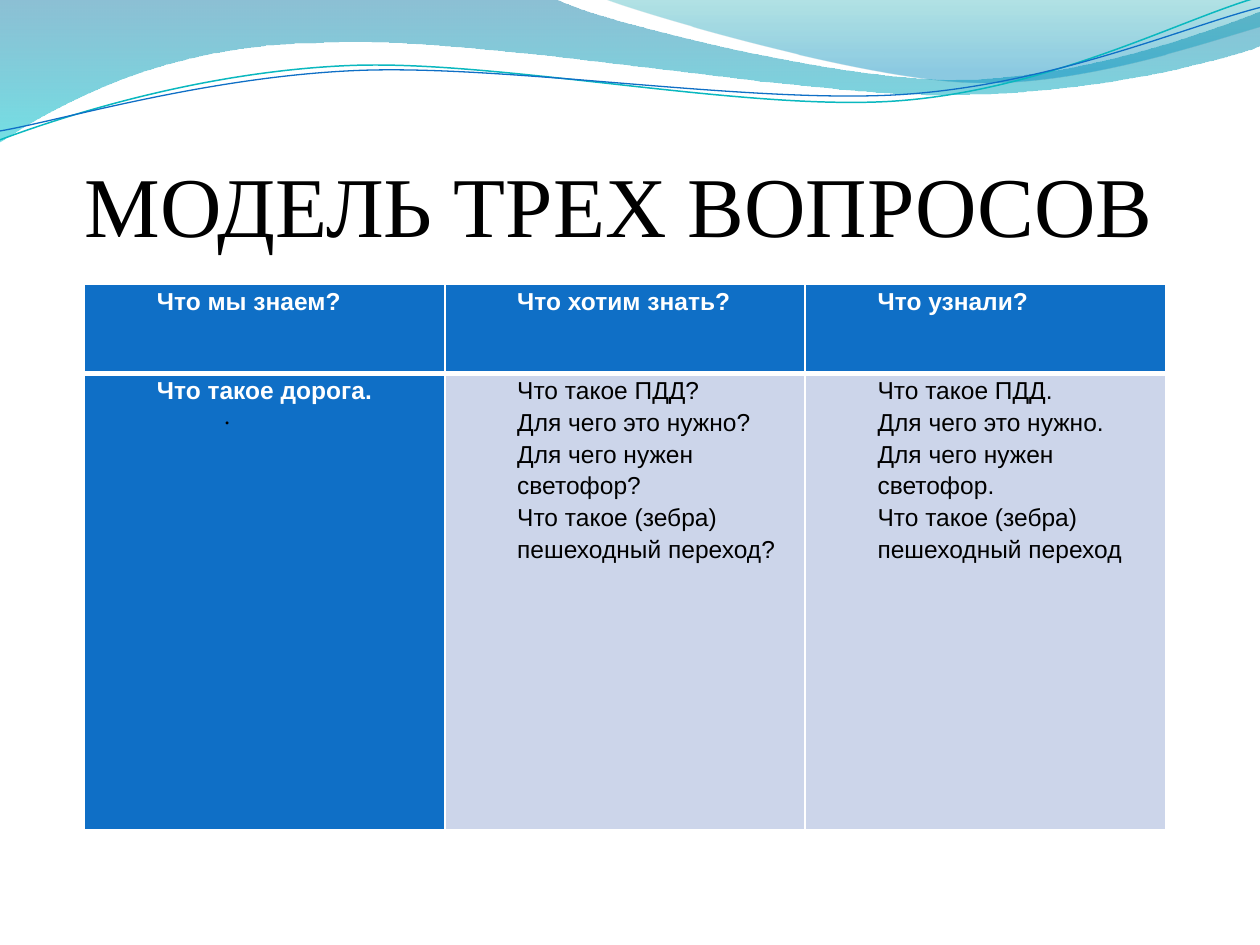
from math import cos, radians, sin

from lxml import etree
from pptx import Presentation
from pptx.dml.color import RGBColor
from pptx.enum.text import MSO_ANCHOR, MSO_AUTO_SIZE, PP_ALIGN
from pptx.oxml.ns import qn
from pptx.util import Inches, Pt

LEFT = PP_ALIGN.LEFT
TOP, MIDDLE, BOTTOM = MSO_ANCHOR.TOP, MSO_ANCHOR.MIDDLE, MSO_ANCHOR.BOTTOM
NO_FIT, GROW = MSO_AUTO_SIZE.NONE, MSO_AUTO_SIZE.SHAPE_TO_FIT_TEXT

BLACK = RGBColor(0x00, 0x00, 0x00)
WHITE = RGBColor(0xFF, 0xFF, 0xFF)
BLUE = RGBColor(0x0F, 0x6F, 0xC6)
PALE = RGBColor(0xCC, 0xD5, 0xEA)
TEAL_LINE = RGBColor(0x0A, 0xB8, 0xBF)
DEEP_BLUE = RGBColor(0x00, 0x74, 0xA1)
TURQUOISE = RGBColor(0x00, 0xC6, 0xCF)
SEA_GREEN = RGBColor(0x00, 0xA1, 0xA9)
SKY_BLUE = RGBColor(0x00, 0x8B, 0xBF)
SERIF, SANS = "Times New Roman", "Arial"
TILT = 2.7

prs = Presentation()
prs.slide_width, prs.slide_height = Inches(10), Inches(7.5)
W, H = prs.slide_width, prs.slide_height
slide = prs.slides.add_slide(prs.slide_layouts[5])


def draw_wave(start, segments, closed, center=(0, 0), tilt=0):
    numbers = [*start, *(n for segment in segments for n in segment)]
    (cx, cy), c, s = center, cos(radians(tilt)), sin(radians(tilt))
    vertices = [(Inches(cx + (x - cx) * c - (y - cy) * s), Inches(cy + (x - cx) * s + (y - cy) * c))
                for x, y in zip(numbers[::2], numbers[1::2])]
    builder = slide.shapes.build_freeform(*vertices[0])
    builder.add_line_segments(vertices[1:], close=closed)
    wave = builder.convert_to_shape()
    wave.shadow.inherit = False
    wave.rotation = -tilt
    lines = wave._element.iter(qn("a:lnTo"))
    lines = iter(list(lines))
    for segment in segments:
        first = next(lines)
        if len(segment) == 6:
            first.tag = qn("a:cubicBezTo")
            for follower in (next(lines), next(lines)):
                first.append(follower[0])
                follower.getparent().remove(follower)
    return wave


def add_run(paragraph, text, font, size, color, bold=False):
    run = paragraph.add_run()
    run.text = text
    run.font.name, run.font.size, run.font.bold = font, Pt(size), bold
    run.font.color.rgb = color


bands = [
    ((0, -0.01),
     [(4.4, -0.01), (4.76, 0.17, 6.64, 0.63, 7.58, 0.63), (8.53, 0.63, 9.58, 0.26, 10, 0.09),
      (10.01, 0.36), (9.83, 0.44, 8.7, 0.76, 7.46, 0.75), (6.22, 0.75, 3.82, 0.28, 2.57, 0.34),
      (1.29, 0.35, 0.46, 0.83, -0.01, 1.13)],
     [(0, DEEP_BLUE, 45), (1, TURQUOISE, 55)]),
    ((4.79, -0.01),
     [(5.09, 0.11, 6.82, 0.62, 7.69, 0.65), (8.56, 0.69, 9.61, 0.32, 10, 0.21), (10, 0)],
     [(0, SEA_GREEN, 30), (0.8, SKY_BLUE, 45)]),
]
for start, segments, stops in bands:
    band = draw_wave(start, segments, True)
    band.line.fill.background()
    band.fill.gradient()
    band.fill.gradient_angle = 270
    for stop, (position, color, opacity) in zip(band.fill.gradient_stops, stops):
        stop.position = position
        stop.color.rgb = color
    colors = band._element.spPr.find(qn("a:gradFill")).iter(qn("a:srgbClr"))
    for color_element, (_, _, opacity) in zip(colors, stops):
        etree.SubElement(color_element, qn("a:alpha"), val=str(opacity * 1000))

ripples = [
    ((0, 1.11),
     [(0.48, 0.93, 1.58, 0.57, 2.77, 0.52), (3.95, 0.47, 5.93, 0.89, 7.13, 0.8),
      (8.33, 0.71, 9.38, 0.15, 9.98, -0.02)], (4.99, 0.58), TEAL_LINE, 0.85),
    ((0, 1.04),
     [(0.47, 0.96, 1.64, 0.61, 2.83, 0.56), (4.03, 0.51, 5.97, 0.83, 7.17, 0.75),
      (8.36, 0.67, 9.41, 0.21, 10, 0.06)], (5, 0.59), BLUE, 0.75),
]
for start, segments, center, color, width in ripples:
    ripple = draw_wave(start, segments, False, center, TILT)
    ripple.fill.background()
    ripple.line.color.rgb = color
    ripple.line.width = Pt(width)

title = slide.shapes.title
title.left, title.top = int(W * 0.05), Inches(0.77)
title.width, title.height = int(W * 0.9), Inches(1.25)
heading = title.text_frame
heading.auto_size, heading.vertical_anchor = NO_FIT, BOTTOM
heading.margin_left, heading.margin_right = Inches(0.17), 0
heading.margin_top, heading.margin_bottom = Inches(0.05), 0
heading.paragraphs[0].alignment = LEFT
add_run(heading.paragraphs[0], "МОДЕЛЬ ТРЕХ ВОПРОСОВ", SERIF, 48.6, BLACK)

questions = [
    [["Что мы знаем?"], ["Что хотим знать?"], ["Что узнали?"]],
    [["Что такое дорога."],
     ["Что такое ПДД?", "Для чего это нужно?", "Для чего нужен светофор?",
      "Что такое (зебра) пешеходный переход?"],
     ["Что такое ПДД.", "Для чего это нужно.", "Для чего нужен светофор.",
      "Что такое (зебра) пешеходный переход"]],
]
row_heights = [0.71, 3.62]
table = slide.shapes.add_table(2, 3, Inches(0.67), Inches(2.255),
                               Inches(8.58), Inches(sum(row_heights))).table
table.first_col, table.horz_banding = True, False
for column in table.columns:
    column.width = Inches(2.86)
for r, (height, row) in enumerate(zip(row_heights, questions)):
    table.rows[r].height = Inches(height)
    for c, lines in enumerate(row):
        cell = table.cell(r, c)
        accent = r == 0 or c == 0
        cell.fill.solid()
        cell.fill.fore_color.rgb = BLUE if accent else PALE
        cell.margin_left = cell.margin_right = Pt(5.4)
        cell.margin_top = cell.margin_bottom = 0
        cell.vertical_anchor = TOP
        for i, line in enumerate(lines):
            paragraph = cell.text_frame.paragraphs[0] if i == 0 else cell.text_frame.add_paragraph()
            paragraph.line_spacing = 1.15
            paragraph.alignment = LEFT
            properties = paragraph._p.get_or_add_pPr()
            properties.set("marL", str(Inches(0.5)))
            properties.set("indent", "0")
            add_run(paragraph, line, SANS, 14, WHITE if accent else BLACK, accent)
        cell_properties = cell._tc.get_or_add_tcPr()
        header_edge = {(0, "B"), (1, "T")}
        for i, side in enumerate("LRTB"):
            width = Pt(3 if (r, side) in header_edge else 1)
            border = etree.Element(qn("a:ln" + side), w=str(width))
            solid = etree.SubElement(border, qn("a:solidFill"))
            etree.SubElement(solid, qn("a:srgbClr"), val=str(WHITE))
            cell_properties.insert(i, border)

dot = slide.shapes.add_textbox(Inches(1.68), Inches(3.12), Inches(0.25), Inches(0.34)).text_frame
dot.word_wrap, dot.auto_size, dot.vertical_anchor = False, GROW, MIDDLE
add_run(dot.paragraphs[0], ".", SERIF, 14, BLACK)

prs.save("out.pptx")
